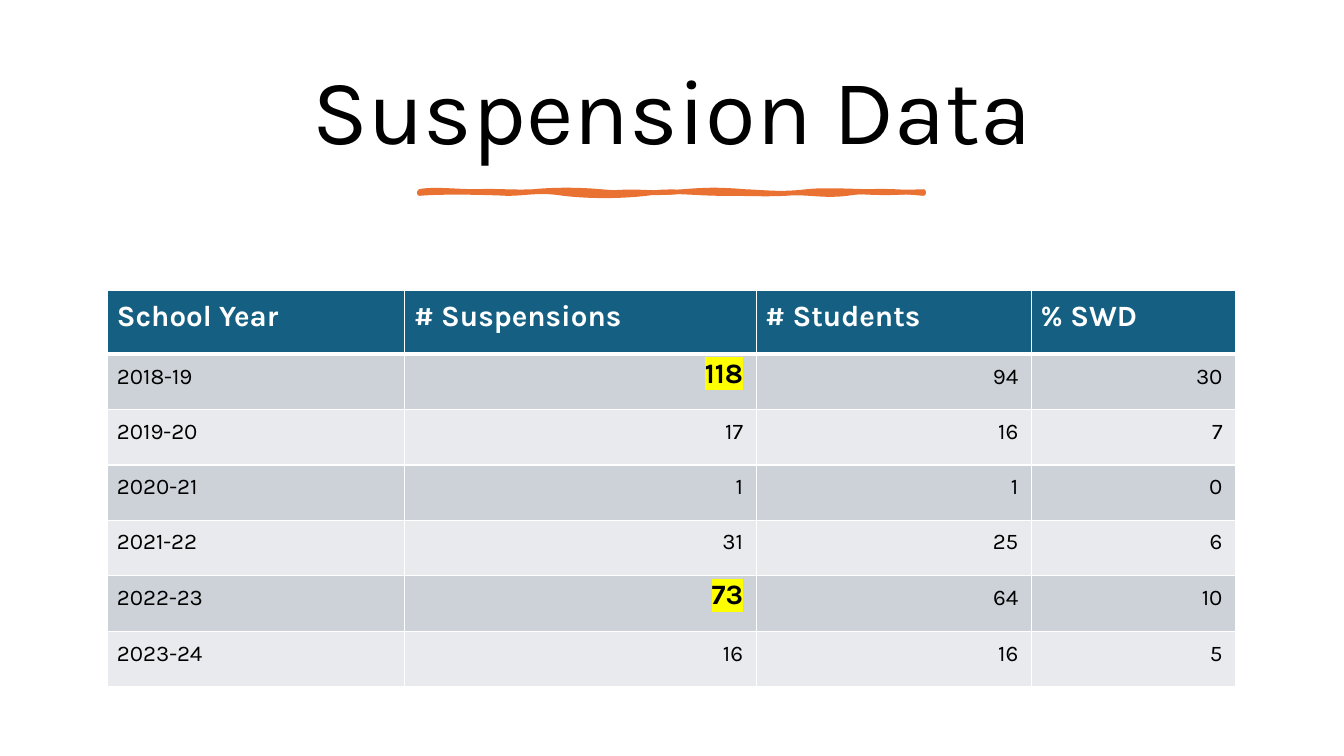
import pptx
import pptx.dml.color
import pptx.enum.text
import pptx.oxml
import pptx.oxml.ns
import pptx.util

ALIGN = pptx.enum.text.PP_ALIGN
ANCHOR = pptx.enum.text.MSO_ANCHOR
NS = pptx.oxml.ns.nsdecls("a")

# Grid: 1333 columns by 750 rows of square cells
CELL = pptx.util.Inches(0.01)


def grid(count):
    return pptx.util.Emu(round(count * CELL))


def colour(code):
    return pptx.dml.color.RGBColor.from_string(code)


def write(frame, text, size, ink="000000", font="Karla", bold=False,
          align=ALIGN.LEFT, spacing=None, highlight=None):
    paragraph = frame.paragraphs[0]
    paragraph.alignment = align
    if spacing:
        paragraph.line_spacing = spacing
    run = paragraph.add_run()
    run.text = text
    run.font.size = pptx.util.Pt(size)
    run.font.bold = bold
    run.font.name = font
    run.font.color.rgb = colour(ink)
    if highlight:
        marker = pptx.oxml.parse_xml(
            f'<a:highlight {NS}><a:srgbClr val="{highlight}"/></a:highlight>')
        run.font.fill._xPr.find(pptx.oxml.ns.qn("a:solidFill")).addnext(marker)


class SlideBuilder:
    accent = "E97132"
    header_fill = "156082"
    bands = ("CCD2D8", "E8EAED")
    rule = "FFFFFF"
    marker = "FFFF00"

    def __init__(self, slide):
        self.slide = slide

    def title(self, text, left, top, width, height):
        box = self.slide.shapes.add_textbox(*map(grid, (left, top, width, height)))
        box.text_frame.word_wrap = True
        box.text_frame.vertical_anchor = ANCHOR.MIDDLE
        write(box.text_frame, text, 66, align=ALIGN.CENTER, spacing=0.9)

    def brush_stroke(self, left, top, width, height, contours, line_width):
        """Draw curved contours in one shape; each has its own path attribute."""
        right, bottom = left + width, top + height
        builder = self.slide.shapes.build_freeform(grid(left), grid(top))
        builder.add_line_segments(
            [(grid(x), grid(y)) for x, y in ((right, top), (right, bottom), (left, bottom))])
        stroke = builder.convert_to_shape()
        stroke.shadow.inherit = False
        stroke.fill.solid()
        stroke.fill.fore_color.rgb = colour(self.accent)
        stroke.line.color.rgb = colour(self.accent)
        stroke.line.width = pptx.util.Pt(line_width)

        path_list = stroke._element.spPr.find(
            f'{pptx.oxml.ns.qn("a:custGeom")}/{pptx.oxml.ns.qn("a:pathLst")}')
        path_list.clear()
        for attribute, curves in contours:
            bends = ""
            for curve in curves:
                points = "".join(f'<a:pt x="{grid(x - left)}" y="{grid(y - top)}"/>'
                                 for x, y in zip(curve[::2], curve[1::2]))
                bends += f"<a:cubicBezTo>{points}</a:cubicBezTo>"
            path_list.append(pptx.oxml.parse_xml(
                f'<a:path {NS} w="{grid(width)}" h="{grid(height)}" {attribute}>'
                f'<a:moveTo><a:pt x="0" y="0"/></a:moveTo>{bends}<a:close/></a:path>'))

    def header_borders(self, cell):
        properties = cell._tc.get_or_add_tcPr()
        sides = {"lnL": 1, "lnR": 1, "lnT": 1, "lnB": 3}
        for position, (side, width) in enumerate(sides.items()):
            properties.insert(position, pptx.oxml.parse_xml(
                f'<a:{side} {NS} w="{pptx.util.Pt(width)}"><a:solidFill>'
                f'<a:srgbClr val="{self.rule}"/></a:solidFill></a:{side}>'))

    def table(self, rows, left, top, widths, heights, highlighted):
        table = self.slide.shapes.add_table(
            len(rows), len(widths), grid(left), grid(top),
            grid(sum(widths)), grid(sum(heights))).table
        for column, width in zip(table.columns, widths):
            column.width = grid(width)
        for r, (row, height) in enumerate(zip(rows, heights)):
            table.rows[r].height = grid(height)
            for c, text in enumerate(row):
                cell = table.cell(r, c)
                cell.vertical_anchor = ANCHOR.BOTTOM
                cell.margin_left, cell.margin_top = grid(9), grid(2.6)
                cell.margin_right, cell.margin_bottom = grid(13), grid(19.6)
                cell.fill.solid()
                cell.fill.fore_color.rgb = colour(
                    self.bands[(r - 1) % 2] if r else self.header_fill)
                if r == 0:
                    self.header_borders(cell)
                    look = dict(size=21, ink="FFFFFF", bold=True)
                elif (r, c) in highlighted:
                    look = dict(size=20, bold=True, highlight=self.marker)
                else:
                    look = dict(size=16)
                write(cell.text_frame, text,
                      align=ALIGN.RIGHT if r and c else ALIGN.LEFT, **look)


def main():
    deck = pptx.Presentation()
    deck.slide_width = pptx.util.Inches(13.33)
    deck.slide_height = pptx.util.Inches(7.5)
    builder = SlideBuilder(deck.slides.add_slide(deck.slide_layouts[6]))

    # Heading
    builder.title("Suspension Data", 70, 45, 1193, 137)

    # Hand-drawn underline: a loose outline and a filled body
    underline_outline = [
        (428, 187, 454, 190, 473, 190), (492, 189, 509, 191, 529, 190),
        (549, 188, 574, 188, 596, 190), (617, 192, 653, 192, 677, 190),
        (702, 188, 714, 188, 739, 190), (763, 191, 774, 193, 800, 190),
        (826, 187, 867, 192, 916, 190), (917, 191, 916, 191, 916, 192),
        (895, 190, 865, 188, 840, 192), (815, 195, 801, 190, 779, 192),
        (756, 193, 747, 192, 717, 192), (687, 192, 667, 188, 641, 192),
        (614, 195, 585, 195, 559, 192), (534, 188, 523, 192, 503, 192),
        (483, 191, 438, 190, 416, 192), (416, 191, 416, 190, 416, 190),
    ]
    underline_body = [
        (432, 189, 452, 188, 478, 190), (503, 191, 508, 192, 534, 190),
        (560, 188, 574, 192, 596, 190), (618, 187, 639, 188, 667, 190),
        (695, 191, 724, 187, 744, 190), (763, 192, 802, 188, 825, 190),
        (848, 191, 872, 193, 916, 190), (916, 190, 916, 191, 916, 192),
        (879, 194, 876, 194, 840, 192), (804, 189, 796, 191, 759, 192),
        (721, 192, 716, 188, 677, 192), (639, 196, 637, 190, 621, 192),
        (604, 193, 572, 193, 544, 192), (517, 190, 504, 191, 478, 192),
        (452, 192, 441, 189, 416, 192), (416, 191, 416, 190, 416, 190),
    ]
    builder.brush_stroke(
        416, 190, 500, 2, line_width=3.25,
        contours=[('fill="none"', underline_outline), ('stroke="0"', underline_body)])

    # Suspensions by school year
    suspensions = [
        ("School Year", "# Suspensions", "# Students", "% SWD"),
        ("2018-19", "118", "94", "30"),
        ("2019-20", "17", "16", "7"),
        ("2020-21", "1", "1", "0"),
        ("2021-22", "31", "25", "6"),
        ("2022-23", "73", "64", "10"),
        ("2023-24", "16", "16", "5"),
    ]
    builder.table(suspensions, 107, 288.5, widths=(294.5, 348.5, 273, 202.5),
                  heights=[62.5] + [54.8] * 6, highlighted={(1, 1), (5, 1)})

    deck.save("out.pptx")


if __name__ == "__main__":
    main()
